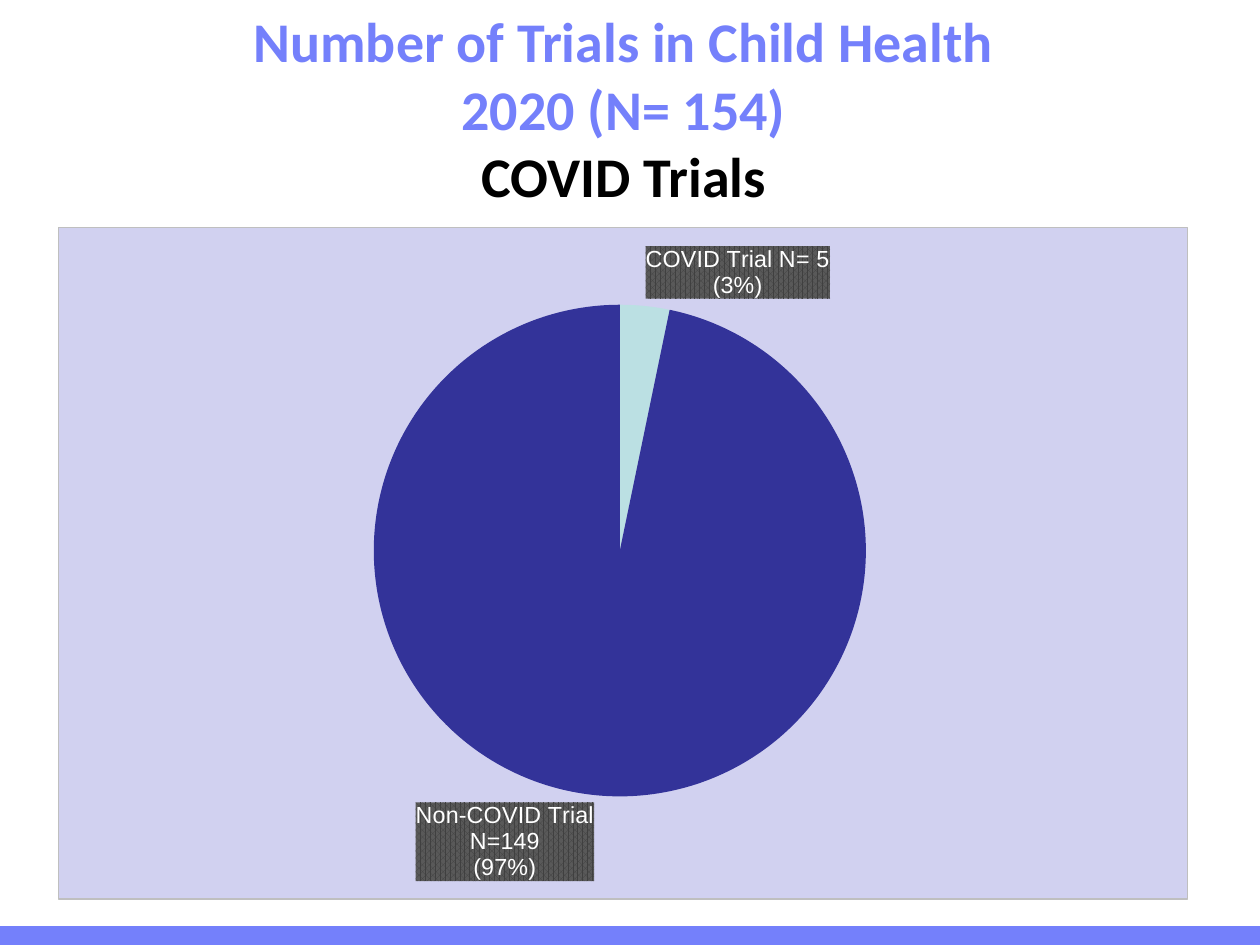
from lxml import etree
from pptx import Presentation
from pptx.chart.data import CategoryChartData
from pptx.dml.color import RGBColor
from pptx.enum import chart as chart_enum, shapes, text
from pptx.oxml import ns, parse_xml
from pptx.util import Inches, Pt

# Content
TITLE = [("Number of Trials in Child Health 2020 (N= 154)\v", "7480FB"),
         ("COVID Trials", "000000")]
SLICES = [  # value, fill, label lines
    (5, "BBE0E3", ["COVID Trial N= 5", "(3%)"]),
    (149, "333399", ["Non-COVID Trial N=149", "(97%)"]),
]

# Chart geometry in inches; the pie centre is measured from the chart's corner
CHART_LEFT, CHART_TOP, CHART_WIDTH, CHART_HEIGHT = 0.46, 1.8, 8.97, 5.34
PIE_X, PIE_Y, PIE_SIZE = 4.46, 2.57, 3.91

CHART_FILL = '<a:solidFill><a:srgbClr val="D1D1F0"/></a:solidFill>'
CHART_LINE = ('<a:ln w="9525"><a:solidFill><a:srgbClr val="BFBFBF"/>'
              '</a:solidFill></a:ln>')
LABEL_FILL = ('<a:pattFill prst="pct75"><a:fgClr><a:srgbClr val="404040"/></a:fgClr>'
              '<a:bgClr><a:srgbClr val="595959"/></a:bgClr></a:pattFill>')


def color(value):
    return RGBColor.from_string(value)


def format_font(font, *, name, size, fill, bold=None):
    font.name, font.size, font.bold = name, Pt(size), bold
    font.color.rgb = color(fill)


def add_text(paragraph, content, **style):
    paragraph.alignment = text.PP_ALIGN.CENTER
    for index, part in enumerate(content.split("\v")):
        if index:
            paragraph.add_line_break()
        if part:
            run = paragraph.add_run()
            run.text = part
            format_font(run.font, **style)


def format_after(element, properties):
    """Add chart shape properties directly after an element."""
    element.addnext(parse_xml(
        f'<c:spPr {ns.nsdecls("c", "a")}>{properties}</c:spPr>'))


presentation = Presentation()
presentation.slide_width, presentation.slide_height = Inches(10), Inches(7.5)
slide = presentation.slides.add_slide(presentation.slide_layouts[5])

# Bottom band
band = slide.shapes.add_shape(shapes.MSO_SHAPE.RECTANGLE, Inches(0), Inches(7.35),
                              Inches(10), Inches(0.15))
band.shadow.inherit = False
band.fill.solid()
band.fill.fore_color.rgb = color("7480FB")
band.line.fill.background()

# Title
title = slide.shapes.title
title.left, title.top = Inches(1.63), Inches(0.34)
title.width, title.height = Inches(6.64), Inches(1.03)
frame = title.text_frame
frame.word_wrap = True
frame.auto_size = text.MSO_AUTO_SIZE.NONE
frame.vertical_anchor = text.MSO_ANCHOR.MIDDLE
for content, fill in TITLE:
    add_text(frame.paragraphs[0], content, name="Calibri", size=32, fill=fill, bold=True)

# Pie chart
data = CategoryChartData()
data.categories = [str(number) for number in range(1, len(SLICES) + 1)]
data.add_series("Series 1", [value for value, _, _ in SLICES])
chart = slide.shapes.add_chart(
    chart_enum.XL_CHART_TYPE.PIE, Inches(CHART_LEFT), Inches(CHART_TOP),
    Inches(CHART_WIDTH), Inches(CHART_HEIGHT), data).chart
chart.has_legend = chart.has_title = False
format_font(chart.font, name="Arial", size=10, fill="000000")
plot = chart.plots[0]
plot.vary_by_categories = True
series = plot.series[0]

# Label style of the whole series
labels = series.data_labels
labels.show_value = True
labels.show_percentage = labels.show_category_name = labels.show_legend_key = False
labels.position = chart_enum.XL_LABEL_POSITION.OUTSIDE_END
format_font(labels.font, name="Arial", size=13.3, fill="FFFFFF", bold=True)

# Slices and their labels
for index, (_, fill, lines) in enumerate(SLICES):
    point = series.points[index]
    point.format.fill.solid()
    point.format.fill.fore_color.rgb = color(fill)
    point.format.line.fill.background()
    label = point.data_label
    frame = label.text_frame
    for number, line in enumerate(lines):
        paragraph = frame.add_paragraph() if number else frame.paragraphs[0]
        add_text(paragraph, line, name="Arial", size=13.3, fill="FFFFFF", bold=False)
    label.position = chart_enum.XL_LABEL_POSITION.OUTSIDE_END
for label_text in chart.element.iter(ns.qn("c:tx")):
    if label_text.getparent().tag == ns.qn("c:dLbl"):
        format_after(label_text, LABEL_FILL)

# Chart background and plot position
format_after(chart.element.find(ns.qn("c:chart")), CHART_FILL + CHART_LINE)
plot_area = chart.element.find(".//" + ns.qn("c:plotArea"))
for old_layout in plot_area.findall(ns.qn("c:layout")):
    plot_area.remove(old_layout)
layout = etree.Element(ns.qn("c:layout"))
manual = etree.SubElement(layout, ns.qn("c:manualLayout"))
settings = {
    "layoutTarget": "inner", "xMode": "edge", "yMode": "edge",
    "x": (PIE_X - PIE_SIZE / 2) / CHART_WIDTH,
    "y": (PIE_Y - PIE_SIZE / 2) / CHART_HEIGHT,
    "w": PIE_SIZE / CHART_WIDTH, "h": PIE_SIZE / CHART_HEIGHT,
}
for name, value in settings.items():
    etree.SubElement(manual, ns.qn(f"c:{name}"), val=str(value))
plot_area.insert(0, layout)

presentation.save("out.pptx")
